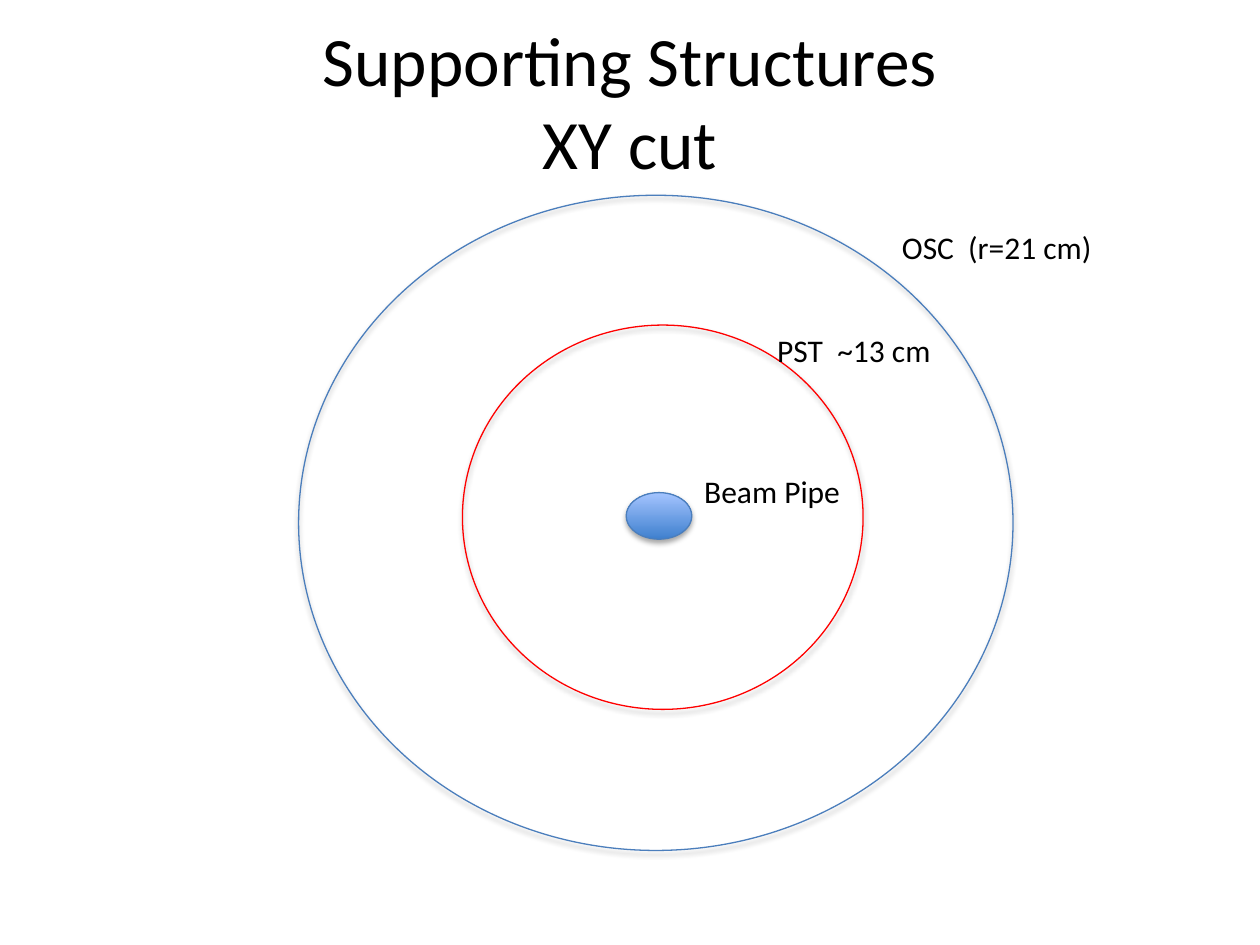
import dataclasses
import lxml.etree
import pptx
import pptx.dml.color
import pptx.enum.shapes
import pptx.enum.text
import pptx.oxml.ns
import pptx.util

Inches = pptx.util.Inches
Pt = pptx.util.Pt
RGB = pptx.dml.color.RGBColor.from_string
ALIGN = pptx.enum.text.PP_ALIGN
ANCHOR = pptx.enum.text.MSO_ANCHOR
qn = pptx.oxml.ns.qn


@dataclasses.dataclass
class Theme:
    font: str = "Calibri"
    ink: str = "000000"
    blue: str = "4B7EBC"
    red: str = "FF0000"
    dark: str = "3F80CE"
    light: str = "A4C4FF"
    head: float = 39.6
    body: float = 18
    line: float = 0.75


theme = Theme()


def add_text(text, box, size=theme.body, align=ALIGN.LEFT,
             anchor=ANCHOR.TOP, wrap=False):
    frame = slide.shapes.add_textbox(*map(Inches, box)).text_frame
    frame.word_wrap = wrap
    frame.vertical_anchor = anchor
    if not wrap:
        frame.auto_size = pptx.enum.text.MSO_AUTO_SIZE.SHAPE_TO_FIT_TEXT
    para = frame.paragraphs[0]
    para.text = text
    para.alignment = align
    for run in para.runs:
        run.font.name = theme.font
        run.font.size = Pt(size)
        run.font.color.rgb = RGB(theme.ink)


def add_ring(box, color):
    ring = slide.shapes.add_shape(
        pptx.enum.shapes.MSO_SHAPE.OVAL, *map(Inches, box))
    ring.fill.background()
    ring.line.color.rgb = RGB(color)
    ring.line.width = Pt(theme.line)
    # Soft shadow straight below
    ring.shadow.inherit = False
    effects = ring._element.spPr.find(qn("a:effectLst"))
    shade = lxml.etree.SubElement(
        effects, qn("a:outerShdw"), blurRad=str(Pt(3.1)),
        dist=str(Pt(1.8)), dir="5400000", rotWithShape="0")
    tint = lxml.etree.SubElement(shade, qn("a:srgbClr"), val=theme.ink)
    lxml.etree.SubElement(tint, qn("a:alpha"), val="35000")
    return ring


deck = pptx.Presentation()
deck.slide_width, deck.slide_height = Inches(10), Inches(7.5)
slide = deck.slides.add_slide(deck.slide_layouts[6])

# Title
add_text("Supporting Structures\nXY cut", (0.5, 0.17, 9, 1.25),
         size=theme.head, align=ALIGN.CENTER, anchor=ANCHOR.MIDDLE, wrap=True)

# Outer cylinder, beam pipe and support tube
add_ring((2.37, 1.55, 5.67, 5.2), theme.blue)
pipe = add_ring((4.97, 3.91, 0.52, 0.37), theme.blue)
add_ring((3.67, 2.58, 3.18, 3.05), theme.red)

# Beam pipe shading, dark at the bottom
pipe.fill.gradient()
pipe.fill.gradient_angle = 90
for stop, color in zip(pipe.fill.gradient_stops, (theme.dark, theme.light)):
    stop.color.rgb = RGB(color)

# Labels
for text, box in (
    ("OSC  (r=21 cm)", (7.06, 1.76, 1.72, 0.4)),
    ("PST  ~13 cm", (6.07, 2.58, 1.43, 0.4)),
    ("Beam Pipe", (5.49, 3.7, 1.29, 0.4)),
):
    add_text(text, box)

deck.save("out.pptx")
